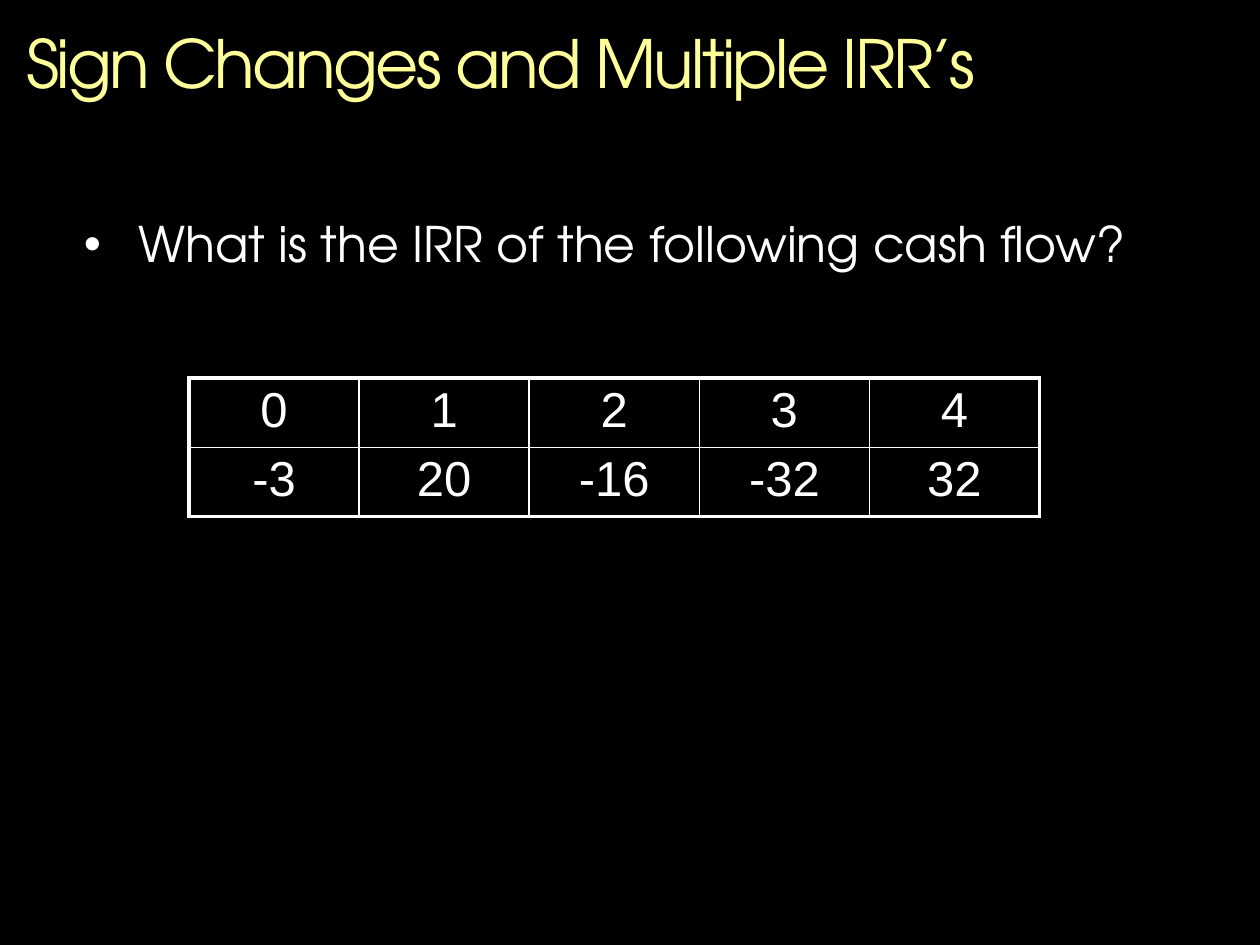
from lxml import etree
from pptx import Presentation
from pptx.dml.color import RGBColor
from pptx.enum import text
from pptx.oxml.ns import qn
from pptx.util import Pt

WHITE, BLACK, CREAM = "FFFFFF", "000000", "FFFF99"
HEAD = "TeX Gyre Adventor"
FLOWS = [["0", "1", "2", "3", "4"],
         ["-3", "20", "-16", "-32", "32"]]
COL, ROW = 97.2, 38.2


def paint(fill, hue):
    fill.solid()
    fill.fore_color.rgb = RGBColor.from_string(hue)


def style(font, face, size, hue):
    for key, value in {"name": face, "size": Pt(size)}.items():
        setattr(font, key, value)
    paint(font.fill, hue)


def add_text(slide, words, box, size, hue, bullet=None, track=0):
    frame = slide.shapes.add_textbox(*map(Pt, box)).text_frame
    zero = dict.fromkeys(("margin_left", "margin_top",
                          "margin_right", "margin_bottom"), 0)
    for key, value in {**zero, "word_wrap": True}.items():
        setattr(frame, key, value)
    para = frame.paragraphs[0]
    para.line_spacing = 0.9
    if bullet:
        props = para._p.get_or_add_pPr()
        props.set("marL", str(Pt(31)))
        props.set("indent", str(-Pt(31)))
        etree.SubElement(props, qn("a:buFont"), typeface="Arial")
        etree.SubElement(props, qn("a:buChar"), char=bullet)
    run = para.add_run()
    run.text = words
    style(run.font, HEAD, size, hue)
    if track:
        run.font._element.set("spc", str(int(track * 100)))


def edge(cell, side, width):
    line = etree.SubElement(cell._tc.get_or_add_tcPr(), qn("a:" + side),
                            w=str(Pt(width)))
    fill = etree.SubElement(line, qn("a:solidFill"))
    etree.SubElement(fill, qn("a:srgbClr"), val=WHITE)


def add_grid(slide, rows, left, top):
    high, wide = len(rows), len(rows[0])
    shape = slide.shapes.add_table(high, wide, Pt(left), Pt(top),
                                   Pt(COL * wide), Pt(ROW * high))
    table = shape.table
    table.first_row = table.horz_banding = False
    for r, row in enumerate(rows):
        table.rows[r].height = Pt(ROW)
        for c, words in enumerate(row):
            cell = table.cell(r, c)
            cell.margin_top = cell.margin_bottom = Pt(3)
            # Outer edges are heavier than inner ones
            outer = {"lnL": c == 0, "lnR": c == wide - 1,
                     "lnT": r == 0, "lnB": r == high - 1}
            for side, thick in outer.items():
                edge(cell, side, 2.25 if thick else 1)
            paint(cell.fill, BLACK)
            para = cell.text_frame.paragraphs[0]
            para.alignment = text.PP_ALIGN.CENTER
            run = para.add_run()
            run.text = words
            style(run.font, "Arial", 28, WHITE)


def main():
    deck = Presentation()
    deck.slide_width, deck.slide_height = Pt(720), Pt(540)
    slide = deck.slides.add_slide(deck.slide_layouts[6])
    paint(slide.background.fill, BLACK)

    # Title and question
    add_text(slide, "Sign Changes and Multiple IRR’s",
             (15, 18, 631.5, 72), 38, CREAM, track=-1.5)
    add_text(slide, "What is the IRR of the following cash flow?",
             (48, 126, 606, 366), 28, WHITE, bullet="•")

    # Cash flow by period
    add_grid(slide, FLOWS, 108, 216)
    deck.save("out.pptx")


if __name__ == "__main__":
    main()
